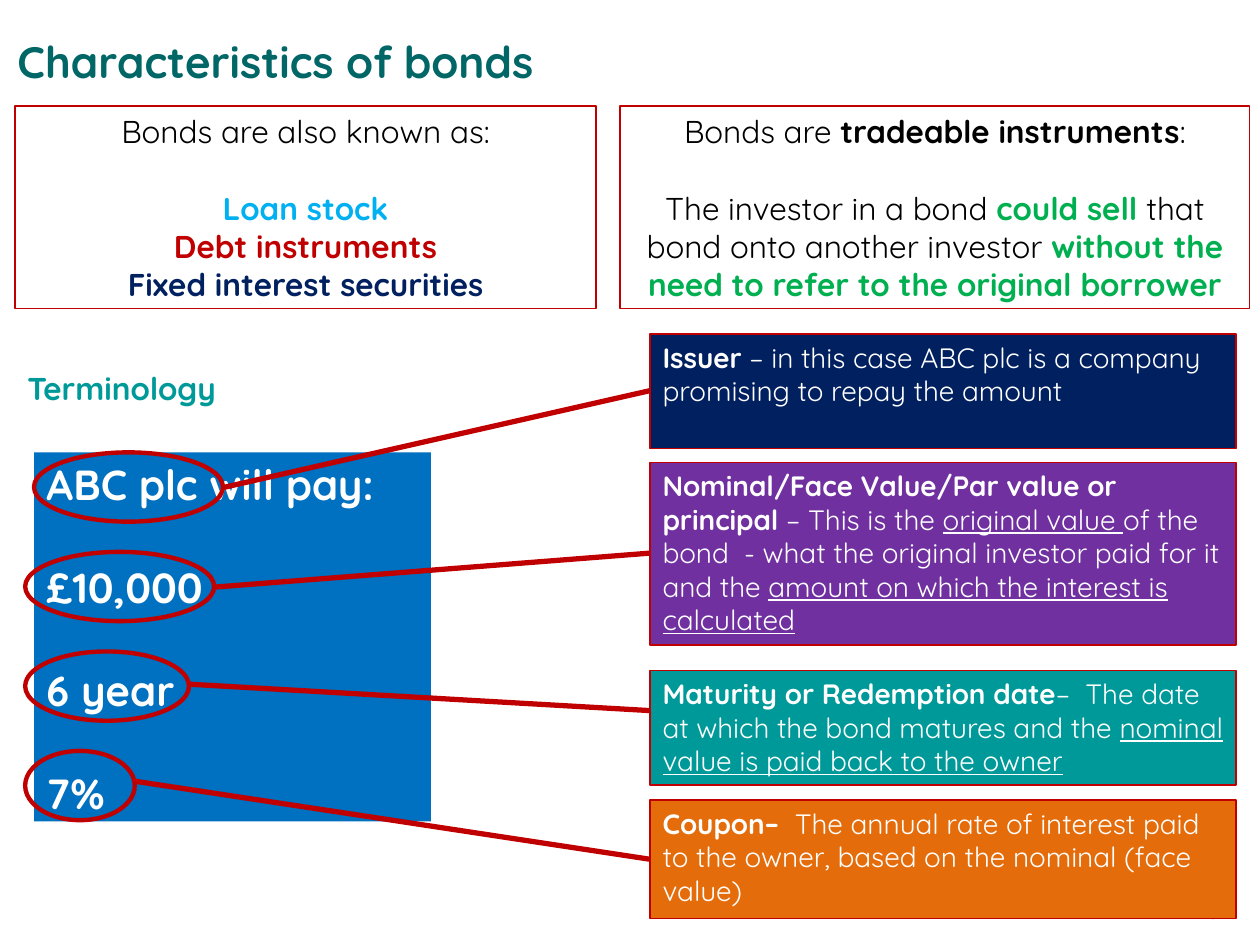
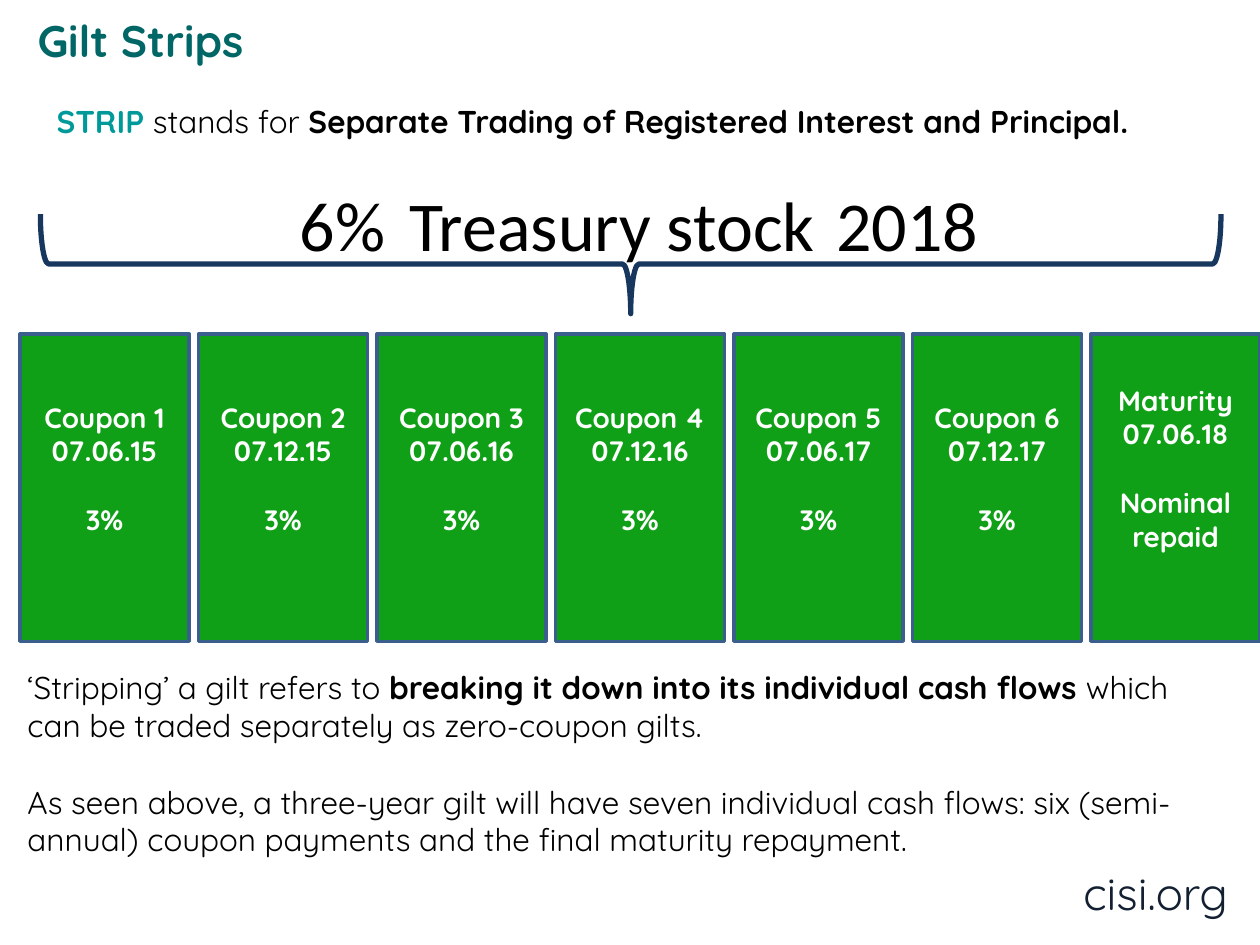
from lxml import etree
from pptx import Presentation
from pptx.dml.color import RGBColor
from pptx.enum.shapes import MSO_CONNECTOR, MSO_SHAPE
from pptx.enum.text import MSO_ANCHOR, PP_ALIGN
from pptx.oxml.ns import qn
from pptx.util import Inches, Pt

RECTANGLE, OVAL, BRACE = MSO_SHAPE.RECTANGLE, MSO_SHAPE.OVAL, MSO_SHAPE.RIGHT_BRACE
STRAIGHT = MSO_CONNECTOR.STRAIGHT
LEFT, CENTER = PP_ALIGN.LEFT, PP_ALIGN.CENTER
TOP, MIDDLE = MSO_ANCHOR.TOP, MSO_ANCHOR.MIDDLE
LINE_SPACING = 1.25

COLORS = {
    "white": "FFFFFF", "black": "000000", "title": "006666", "footer": "122031",
    "teal": "009999", "red": "C00000", "sky": "00B0F0", "navy": "002060",
    "sale": "00B050", "blue": "0070C0", "purple": "7030A0", "orange": "E46C0A",
    "card": "10A017", "card_edge": "3A5F8C", "brace": "17375E",
}
BOLD = {"bold": True}
PLAIN = {"bold": False}
UNDERLINED = {"bold": False, "underline": True}


def rgb(name):
    return RGBColor.from_string(COLORS[name])


def add_shape(slide, box, preset=RECTANGLE, fill=None, line=None, width=0.75):
    shape = slide.shapes.add_shape(preset, *map(Inches, box))
    shape.shadow.inherit = False
    if fill:
        shape.fill.solid()
        shape.fill.fore_color.rgb = rgb(fill)
    else:
        shape.fill.background()
    if line:
        shape.line.color.rgb = rgb(line)
        shape.line.width = Pt(width)
    else:
        shape.line.fill.background()
    return shape


def add_text(slide, box, paragraphs, size=18, color="black", bold=False, font="Quicksand",
             align=LEFT, anchor=TOP, wrap=True, blank_before=(), bottom=0.05,
             fill=None, line=None, width=0.75):
    if fill or line:
        holder = add_shape(slide, box, fill=fill, line=line, width=width)
    else:
        holder = slide.shapes.add_textbox(*map(Inches, box))
    frame = holder.text_frame
    frame.word_wrap = wrap
    frame.vertical_anchor = anchor
    frame.margin_bottom = Inches(bottom)
    for index, runs in enumerate(paragraphs):
        paragraph = frame.paragraphs[0] if index == 0 else frame.add_paragraph()
        paragraph.alignment = align
        if index in blank_before:
            paragraph.space_before = Pt(size * LINE_SPACING)
        for words, style in [(runs, {})] if isinstance(runs, str) else runs:
            run = paragraph.add_run()
            run.text = words
            run.font.name = font
            run.font.size = Pt(size)
            run.font.bold = style.get("bold", bold)
            run.font.underline = style.get("underline")
            run.font.color.rgb = rgb(style.get("color", color))
    return holder


def add_link(slide, start, end):
    link = slide.shapes.add_connector(STRAIGHT, *map(Inches, (*start, *end)))
    link.line.color.rgb = rgb("red")
    link.line.width = Pt(3)
    etree.SubElement(link._element.spPr, qn("a:effectLst"))


def start_slide(deck, title, title_box):
    slide = deck.slides.add_slide(deck.slide_layouts[6])
    add_text(slide, (8.5, 6.82, 1.5, 0.54), ["cisi.org"], size=26, color="footer")
    add_text(slide, title_box, [title], size=25.2, color="title", bold=True, anchor=MIDDLE)
    return slide


def add_facts(slide, box):
    left, top, width, height = box
    names_width, gap = 4.61, 0.19
    add_text(slide, (left, top, names_width, height), [
        "Bonds are also known as:",
        [("Loan stock", {"color": "sky", "bold": True})],
        [("Debt instruments", {"color": "red", "bold": True})],
        [("Fixed interest securities", {"color": "navy", "bold": True})],
    ], align=CENTER, blank_before=(1,), line="red")
    trade_offset = names_width + gap
    sale = {"color": "sale", "bold": True}
    add_text(slide, (left + trade_offset, top, width - trade_offset, height), [
        [("Bonds are ", PLAIN), ("tradeable instruments", BOLD), (":", PLAIN)],
        [("The investor in a bond ", PLAIN), ("could sell ", sale),
         ("that bond onto another investor ", PLAIN),
         ("without the need to refer to the original borrower", sale)],
    ], align=CENTER, blank_before=(1,), fill="white", line="red")


TERMS = [
    {"ring": (0, 1.5), "link": (0.28, 0.45), "definition": (0, 0.91), "fill": "navy",
     "runs": [("Issuer", BOLD),
              (" – in this case ABC plc is a company promising to repay the amount", PLAIN)]},
    {"ring": (-0.07, 1.5), "link": (0.28, 0.72), "definition": (1.02, 1.45), "fill": "purple",
     "runs": [("Nominal/Face Value/Par value or principal", BOLD), (" – This is the ", PLAIN),
              ("original value ", UNDERLINED),
              ("of the bond  - what the original investor paid for it and the ", PLAIN),
              ("amount on which the interest is calculated", UNDERLINED)]},
    {"ring": (-0.07, 1.3), "link": (0.26, 0.32), "definition": (2.67, 0.91), "fill": "teal",
     "runs": [("Maturity or Redemption date", BOLD),
              ("–  The date at which the bond matures and the ", PLAIN),
              ("nominal value is paid back to the owner", UNDERLINED)]},
    {"ring": (-0.07, 0.87), "link": (0.24, 0.47), "definition": (3.7, 0.94), "fill": "orange",
     "runs": [("Coupon–  ", BOLD),
              ("The annual rate of interest paid to the owner, "
               "based on the nominal (face value)", PLAIN)]},
]


def add_terminology(slide, box):
    left, top, width, height = box
    definition_width, ring_pitch, ring_height = 4.65, 0.79, 0.55
    definition_left = left + width - definition_width
    promise_top = top + 0.94
    add_text(slide, (left - 0.15, top + 0.23, 3, 0.4), ["Terminology"], color="teal", bold=True)
    add_text(slide, (left, promise_top, 3.15, 2.93),
             ["ABC plc will pay:", "£10,000", "6 year", "7%"],
             size=24, color="white", bold=True, blank_before=(1, 2, 3), fill="blue")
    for row, term in enumerate(TERMS):
        shift, ring_width = term["ring"]
        offset, definition_height = term["definition"]
        link_start, link_end = term["link"]
        ring_left, ring_top = left + shift, promise_top + row * ring_pitch
        add_shape(slide, (ring_left, ring_top, ring_width, ring_height), OVAL,
                  line="red", width=2.5)
        add_text(slide, (definition_left, top + offset, definition_width, definition_height),
                 [term["runs"]], size=16, color="white", fill=term["fill"], line="red")
        add_link(slide, (ring_left + ring_width, ring_top + link_start),
                 (definition_left, top + offset + link_end))


def add_stock_heading(slide, box):
    left, top, width, height = box
    for words, offset, words_width in [("6%", 1.96, 0.89), ("Treasury stock", 2.83, 3.58),
                                       ("2018", 6.22, 1.34)]:
        add_text(slide, (left + offset, top, words_width, 0.77), [words],
                 size=40, font="Calibri", wrap=False)
    depth = 0.79
    brace_box = (left + (width - depth) / 2, top + height - (depth + width) / 2, depth, width)
    brace = add_shape(slide, brace_box, BRACE, line="brace", width=3)
    brace.rotation = 90


def add_cash_flows(slide, box):
    left, top, width, height = box
    dates = ["07.06.15", "07.12.15", "07.06.16", "07.12.16", "07.06.17", "07.12.17"]
    flows = [(f"Coupon {number}", date, "3%") for number, date in enumerate(dates, 1)]
    flows.append(("Maturity", "07.06.18", "Nominal repaid"))
    card_width = 1.34
    pitch = (width - card_width) / (len(flows) - 1)
    for column, flow in enumerate(flows):
        add_text(slide, (left + column * pitch, top, card_width, height), flow,
                 size=16, color="white", bold=True, align=CENTER, anchor=MIDDLE,
                 blank_before=(2,), bottom=0.36, fill="card", line="card_edge", width=2)


def build_bonds(deck):
    slide = start_slide(deck, "Characteristics of bonds", (0.04, 0.21, 7.48, 0.54))
    add_facts(slide, (0.12, 0.84, 9.8, 1.61))
    add_terminology(slide, (0.27, 2.65, 9.54, 4.64))


def build_strips(deck):
    slide = start_slide(deck, "Gilt Strips", (0.2, 0.05, 8.03, 0.54))
    add_stock_heading(slide, (0.32, 1.39, 9.37, 1.1))
    add_cash_flows(slide, (0.16, 2.65, 9.84, 2.44))
    add_text(slide, (0.12, 5.25, 9.53, 1.61), [
        [("‘Stripping’ a gilt refers to ", PLAIN),
         ("breaking it down into its individual cash flows ", BOLD),
         ("which can be traded separately as zero-coupon gilts.", PLAIN)],
        "As seen above, a three-year gilt will have seven individual cash flows: "
        "six (semi-annual) coupon payments and the final maturity repayment.",
    ], blank_before=(1,))
    add_text(slide, (0.35, 0.76, 9.45, 0.4), [
        [("STRIP", {"color": "teal", "bold": True}), (" stands for ", PLAIN),
         ("Separate Trading of Registered Interest and Principal.", BOLD)],
    ], fill="white")


def main():
    deck = Presentation()
    deck.slide_width, deck.slide_height = Inches(10), Inches(7.5)
    build_bonds(deck)
    build_strips(deck)
    deck.save("out.pptx")


if __name__ == "__main__":
    main()
